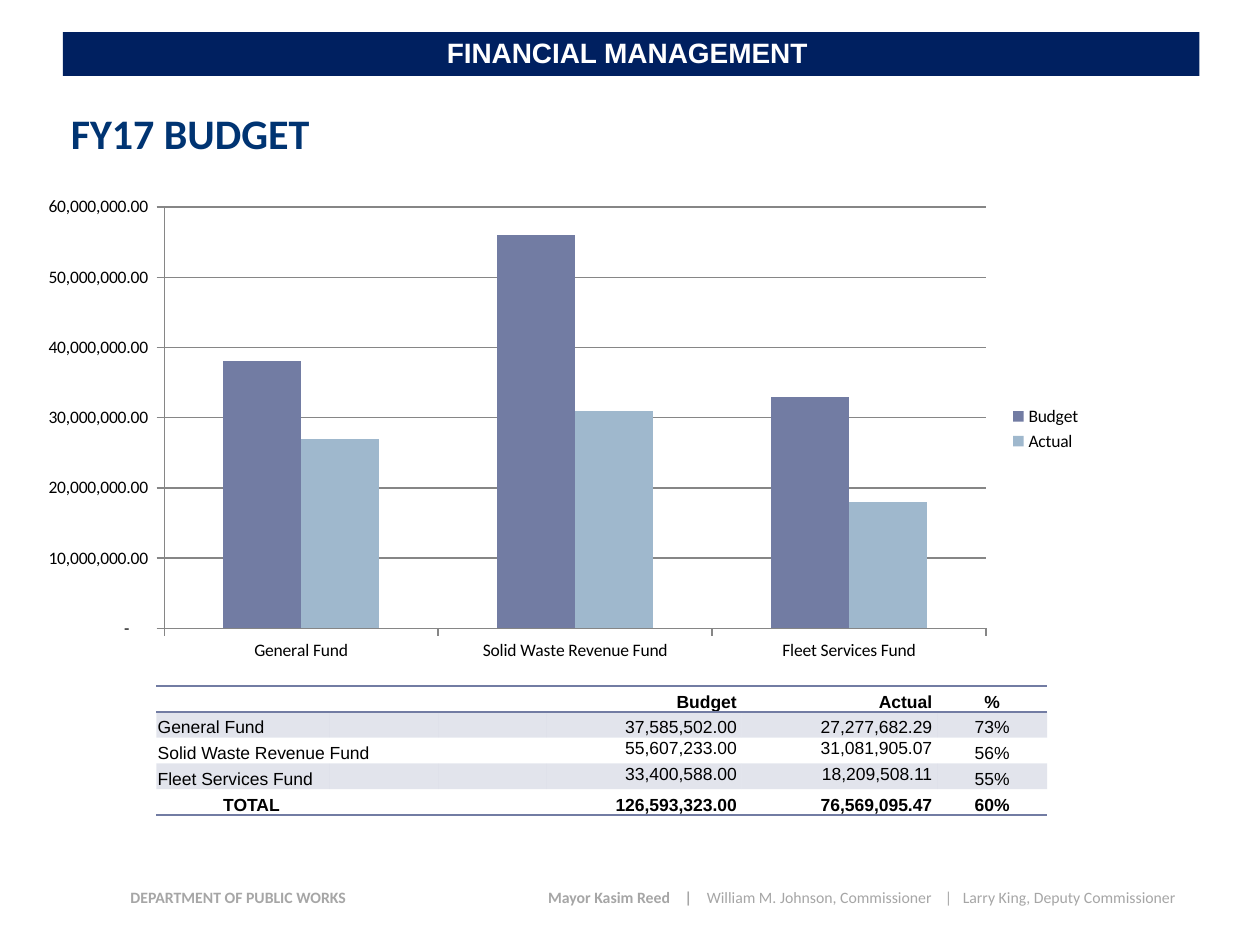
from lxml import etree
from pptx import Presentation
from pptx.chart.data import CategoryChartData
from pptx.dml.color import RGBColor
from pptx.enum.chart import XL_CHART_TYPE as ChartType, XL_LEGEND_POSITION as LegendPosition
from pptx.enum.chart import XL_TICK_MARK as TickMark
from pptx.enum.shapes import MSO_SHAPE as Shape
from pptx.enum.text import MSO_ANCHOR as Anchor, PP_ALIGN as Align
from pptx.oxml.ns import qn
from pptx.util import Cm, Pt

COLORS = {
    "banner": "002060", "white": "FFFFFF", "title": "003472", "footer": "A6A6A6",
    "text": "000000", "budget": "727CA3", "actual": "9FB8CD", "grid": "868686",
}
FUNDS = [
    ("General Fund", 37585502.00, 27277682.29, "73%"),
    ("Solid Waste Revenue Fund", 55607233.00, 31081905.07, "56%"),
    ("Fleet Services Fund", 33400588.00, 18209508.11, "55%"),
]
TOTAL = ("TOTAL", 126593323.00, 76569095.47, "60%")
COLUMN_WIDTHS = [1.32, 2.18, 2.18, 2.18, 3.94, 3.94, 2.22]
ROW_HEIGHT = 0.52
AMOUNT_FORMAT = r'_(* #,##0.00_);_(* \(#,##0.00\);_(* "-"??_);_(@_)'
NO_GRID_STYLE = "{2D5ABB26-0587-4C30-8999-92F81FD0307C}"
FOOTER_TABS = [8.42, 11.17, 11.62, 16.42, 16.78]


def rgb(name):
    return RGBColor.from_string(COLORS[name])


def style_font(font, face, size, color, bold=False):
    font.name, font.size, font.bold = face, Pt(size), bold
    font.color.rgb = rgb(color)


def add_banner(slide):
    bar = slide.shapes.add_shape(Shape.RECTANGLE, Cm(1.27), Cm(0.65), Cm(22.91), Cm(0.88))
    bar.shadow.inherit = False
    bar.fill.solid()
    bar.fill.fore_color.rgb = rgb("banner")
    bar.line.fill.background()


def add_text(slide, box, text, face, size, color, align=Align.LEFT, anchor=Anchor.MIDDLE):
    frame = slide.shapes.add_textbox(*map(Cm, box)).text_frame
    frame.word_wrap = True
    frame.vertical_anchor = anchor
    line = frame.paragraphs[0]
    line.text = text
    line.alignment = align
    style_font(line.runs[0].font, face, size, color, bold=True)
    return line


def add_footer(slide):
    line = add_text(slide, (2.38, 17.76, 21.74, 0.71),
                    "DEPARTMENT OF PUBLIC WORKS\tMayor Kasim Reed\t|\t", "Calibri", 9, "footer")
    line.line_spacing = 0.8
    tabs = etree.SubElement(line._p.get_or_add_pPr(), qn("a:tabLst"))
    for stop in FOOTER_TABS:
        etree.SubElement(tabs, qn("a:tab"), pos=str(Cm(stop)), algn="l")
    officials = line.add_run()
    officials.text = "William M. Johnson, Commissioner\t|\tLarry King, Deputy Commissioner"
    style_font(officials.font, "Calibri", 9, "footer")


def add_fund_chart(slide):
    """Chart budget and actual per fund, to the nearest million."""
    funds, budgets, actuals, _ = zip(*FUNDS)
    data = CategoryChartData(number_format=AMOUNT_FORMAT)
    data.categories = funds
    for name, amounts in (("Budget", budgets), ("Actual", actuals)):
        data.add_series(name, [round(amount, -6) for amount in amounts])
    chart = slide.shapes.add_chart(ChartType.COLUMN_CLUSTERED, Cm(0.47), Cm(3.78),
                                   Cm(21.59), Cm(9.73), data).chart
    chart.has_title = False
    style_font(chart.font, "Calibri", 10, "text")
    chart.has_legend = True
    chart.legend.position = LegendPosition.RIGHT
    chart.legend.include_in_layout = False

    plot = chart.plots[0]
    plot.gap_width, plot.overlap = 150, 0
    plot.vary_by_categories = False
    for series, color in zip(plot.series, ("budget", "actual")):
        series.format.fill.solid()
        series.format.fill.fore_color.rgb = rgb(color)

    amounts, categories = chart.value_axis, chart.category_axis
    amounts.minimum_scale, amounts.maximum_scale, amounts.major_unit = 0, 60000000, 10000000
    amounts.tick_labels.number_format = AMOUNT_FORMAT
    amounts.tick_labels.number_format_is_linked = False
    amounts.has_major_gridlines = True
    for axis in (amounts, categories):
        axis.major_tick_mark = TickMark.OUTSIDE
    for line in (amounts.format.line, categories.format.line, amounts.major_gridlines.format.line):
        line.color.rgb = rgb("grid")
        line.width = Pt(0.75)


def add_border(cell, side):
    border = etree.SubElement(cell._tc.get_or_add_tcPr(), qn(f"a:{side}"), w=str(Pt(1)))
    fill = etree.SubElement(border, qn("a:solidFill"))
    etree.SubElement(fill, qn("a:srgbClr"), val=COLORS["budget"])


def shade(cell):
    """Fill a cell with the budget colour at 20% opacity."""
    cell.fill.solid()
    cell.fill.fore_color.rgb = rgb("budget")
    color = cell._tc.tcPr.find(qn("a:solidFill")).find(qn("a:srgbClr"))
    etree.SubElement(color, qn("a:alpha"), val="20000")


def prepare_cell(cell, borders, shaded):
    cell.margin_left = cell.margin_right = cell.margin_top = Cm(0.03)
    cell.margin_bottom = 0
    cell.vertical_anchor = Anchor.BOTTOM
    for side in borders:
        add_border(cell, side)
    if shaded:
        shade(cell)
    else:
        cell.fill.background()
    etree.SubElement(cell.text_frame.paragraphs[0]._p, qn("a:endParaRPr"), sz="1000")


def write_cell(cell, text, align, bold):
    line = cell.text_frame.paragraphs[0]
    line.text = text
    line.alignment = align
    style_font(line.runs[0].font, "Arial", 10, "text", bold)
    if align == Align.RIGHT:
        cell.margin_right = Cm(0.1)


def add_fund_table(slide):
    rows = [("", "Budget", "Actual", "%")] + [
        (name, f"{budget:,.2f}", f"{actual:,.2f}", share)
        for name, budget, actual, share in FUNDS + [TOTAL]]
    last = len(rows) - 1
    frame = slide.shapes.add_table(len(rows), len(COLUMN_WIDTHS), Cm(3.15), Cm(13.83),
                                   Cm(sum(COLUMN_WIDTHS)), Cm(ROW_HEIGHT * len(rows)))
    table = frame.table
    table.first_row = table.horz_banding = False
    table._tbl.tblPr.find(qn("a:tableStyleId")).text = NO_GRID_STYLE
    for column, width in zip(table.columns, COLUMN_WIDTHS):
        column.width = Cm(width)

    borders = {0: ("lnT", "lnB"), last: ("lnB",)}
    for r, (name, *values) in enumerate(rows):
        table.rows[r].height = Cm(ROW_HEIGHT)
        for c in range(len(COLUMN_WIDTHS)):
            prepare_cell(table.cell(r, c), borders.get(r, ()), shaded=r in (1, 3))
        bold = r in borders
        if name:
            write_cell(table.cell(r, 1 if r == last else 0), name, Align.LEFT, bold)
        for c, value in enumerate(values, start=4):
            write_cell(table.cell(r, c), value, Align.CENTER if c == 6 else Align.RIGHT, bold)
        if not bold:
            table.cell(r, 0).merge(table.cell(r, 2 if r == 2 else 1))
    for r in (2, 3):
        for c in (4, 5):
            table.cell(r, c).vertical_anchor = Anchor.TOP


def main():
    deck = Presentation()
    deck.slide_width, deck.slide_height = Cm(25.4), Cm(19.05)
    slide = deck.slides.add_slide(deck.slide_layouts[6])
    add_footer(slide)
    add_banner(slide)
    add_text(slide, (2.0, 0.6, 21.29, 0.94), "FINANCIAL MANAGEMENT", "Arial", 16, "white",
             Align.CENTER, Anchor.TOP)
    add_text(slide, (1.18, 1.83, 21.46, 1.7), "FY17 BUDGET", "Calibri", 24, "title")
    add_fund_chart(slide)
    add_fund_table(slide)
    deck.save("out.pptx")


if __name__ == "__main__":
    main()
